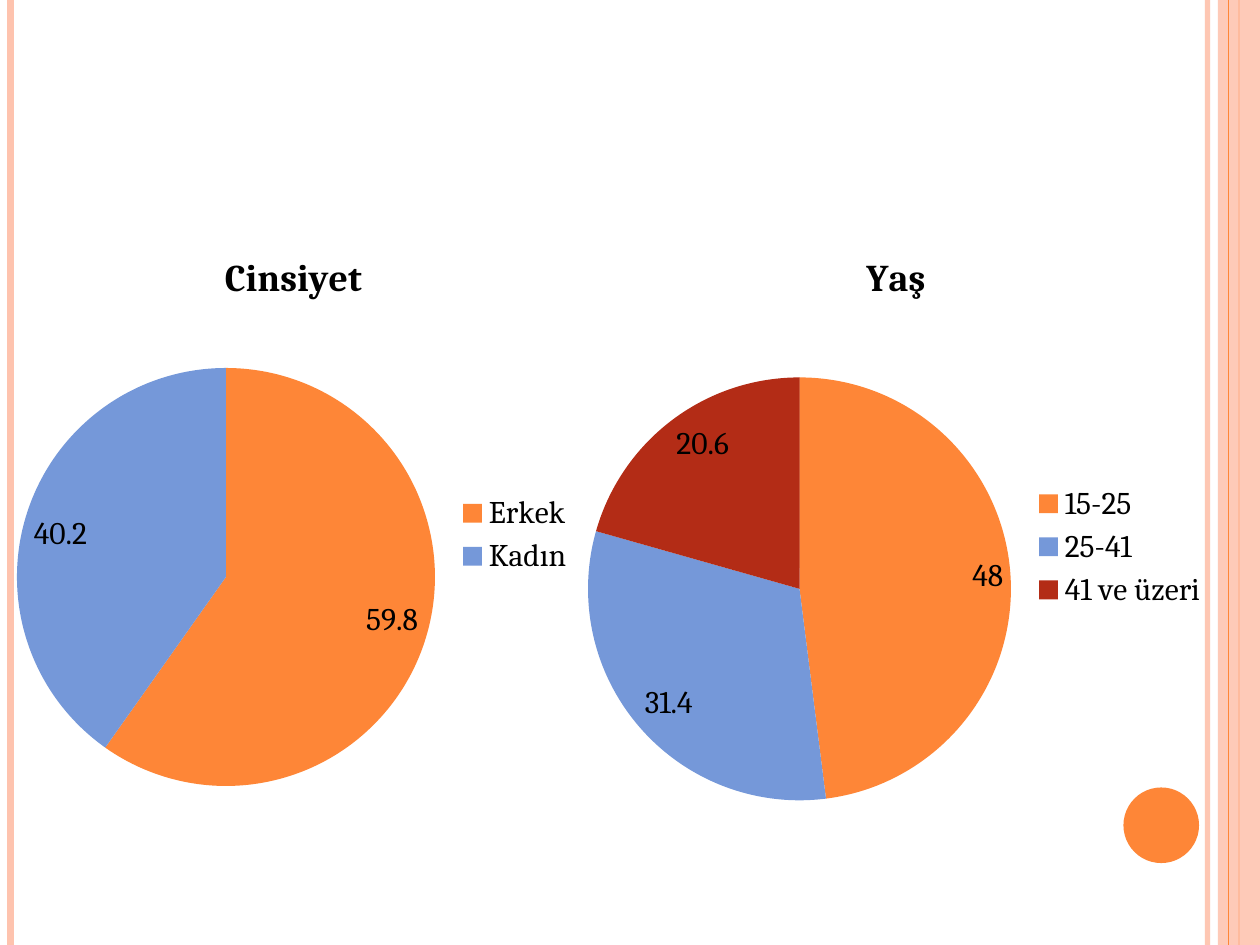
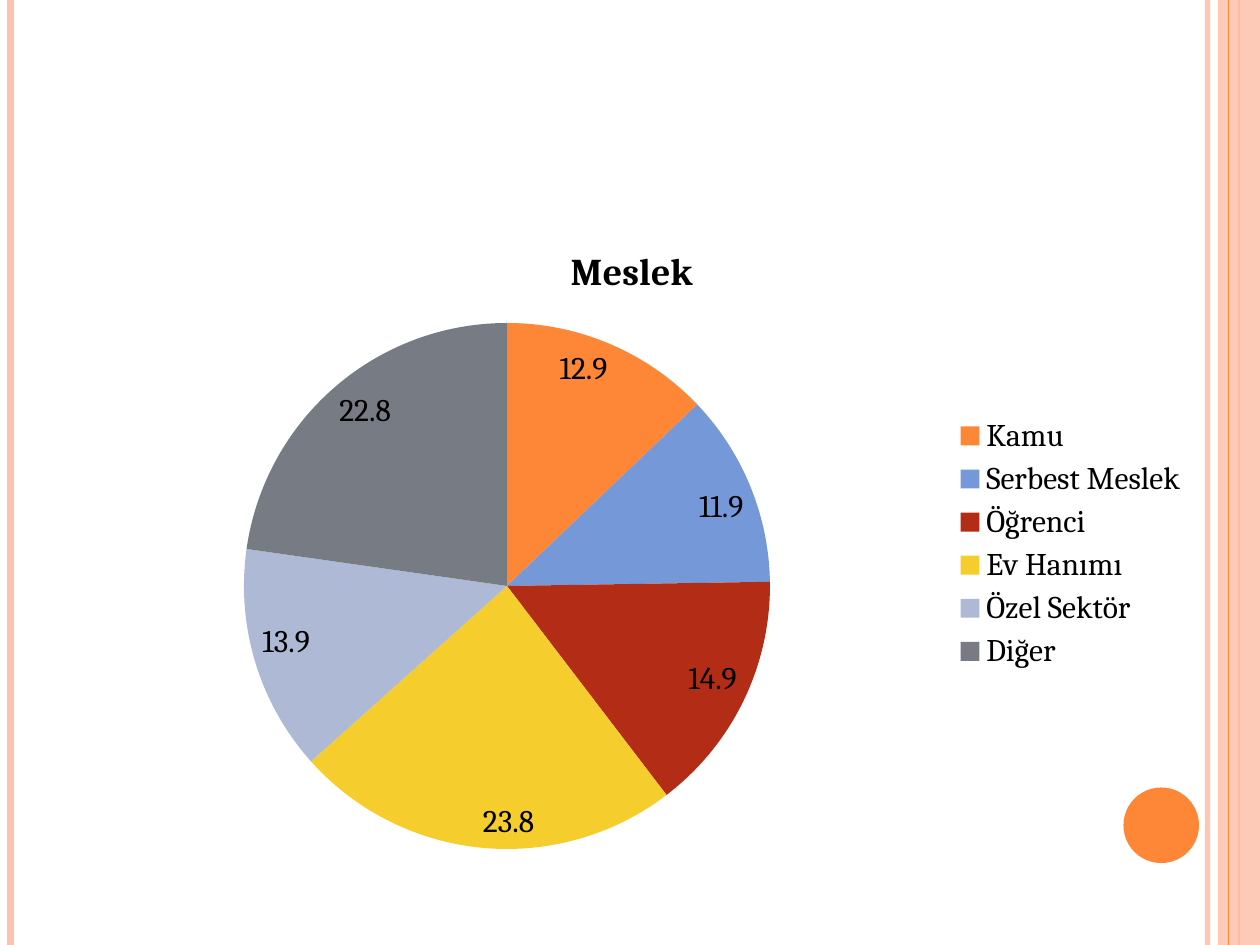
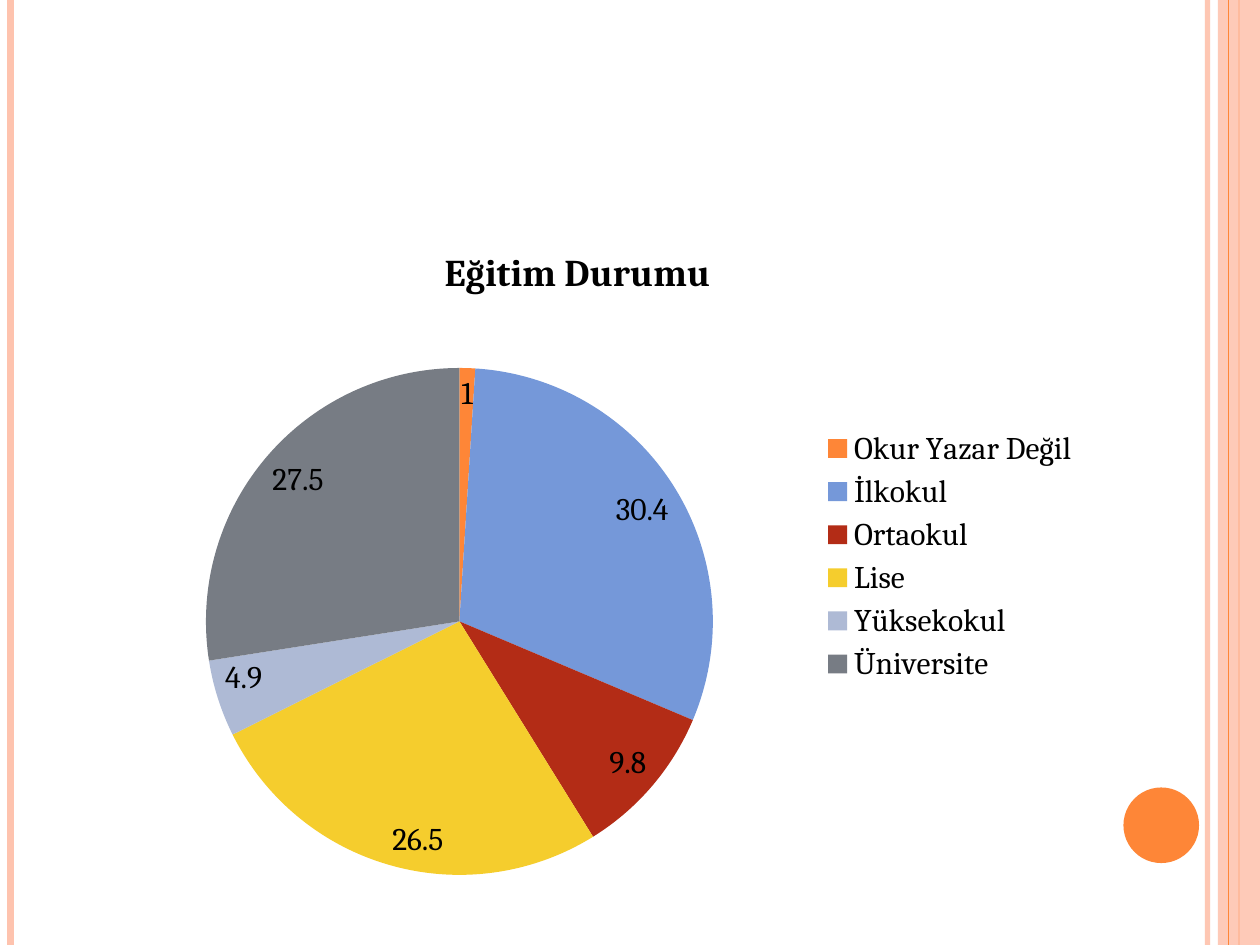
from lxml import etree
from pptx import Presentation
from pptx.chart.data import CategoryChartData
from pptx.dml.color import RGBColor
from pptx.enum import chart as ch, shapes
from pptx.oxml import ns
from pptx.util import Pt

WIDE, HIGH = 720, 540
FONT = "Cambria"
COLORS = {
    "black": "000000",
    "white": "FFFFFF",
    "peach": "FEC3AE",
    "orange": "FE8637",
    "blue": "7598D9",
    "red": "B32C16",
    "yellow": "F5CD2D",
    "pale": "AEBAD5",
    "gray": "777C84",
}
SLICES = ["orange", "blue", "red", "yellow", "pale", "gray"]


def rgb(name):
    return RGBColor.from_string(COLORS[name])


def style(font, size=18, bold=False, color="black"):
    font.name, font.size, font.bold = FONT, Pt(size), bold
    font.color.rgb = rgb(color)


def write(frame, words, **look):
    """Put one formatted run of text into a text frame."""
    run = frame.paragraphs[0].add_run()
    run.text = words
    style(run.font, **look)


def fade(shape, percent):
    """Make every colour of a shape partly transparent."""
    for color in shape.element.spPr.iter(ns.qn("a:srgbClr")):
        alpha = etree.SubElement(color, ns.qn("a:alpha"))
        alpha.set("val", str(percent * 1000))


def place(chart, box, pie):
    """Fix the pie (left, top, size) inside the chart's box."""
    left, top, wide, high = box
    x, y, size = pie
    area = chart.element.find(".//" + ns.qn("c:plotArea"))
    for old in area.findall(ns.qn("c:layout")):
        area.remove(old)
    layout = etree.Element(ns.qn("c:layout"))
    manual = etree.SubElement(layout, ns.qn("c:manualLayout"))
    values = {
        "layoutTarget": "inner", "xMode": "edge", "yMode": "edge",
        "x": (x - left) / wide, "y": (y - top) / high,
        "w": size / wide, "h": size / high,
    }
    for tag, value in values.items():
        etree.SubElement(manual, ns.qn("c:" + tag)).set("val", str(value))
    area.insert(0, layout)


class Deck:
    def __init__(self):
        self.file = Presentation()
        self.file.slide_width, self.file.slide_height = Pt(WIDE), Pt(HIGH)
        self.slide = None

    def page(self):
        """Start a slide with its side bands and corner dot."""
        self.slide = self.file.slides.add_slide(self.file.slide_layouts[6])
        back = self.slide.background.fill
        back.solid()
        back.fore_color.rgb = rgb("white")
        self.rule(690, "peach", 3, 93)
        self.rule(6, "peach", 4.5)
        self.rule(708, "orange", 1.5)
        self.shape(shapes.MSO_SHAPE.RECTANGLE, (696, 0, 24, HIGH), "peach", 87)
        self.rule(702, "orange", 0.75)
        self.shape(shapes.MSO_SHAPE.OVAL, (642, 450, 43.2, 43.2), "orange")

    def rule(self, x, color, width, alpha=100):
        """Draw a line down the full height of the slide."""
        line = self.slide.shapes.add_connector(
            shapes.MSO_CONNECTOR.STRAIGHT, Pt(x), 0, Pt(x), Pt(HIGH))
        line.line.color.rgb = rgb(color)
        line.line.width = Pt(width)
        etree.SubElement(line.element.spPr, ns.qn("a:effectLst"))
        if alpha < 100:
            fade(line, alpha)

    def shape(self, kind, box, color, alpha=100):
        item = self.slide.shapes.add_shape(kind, *map(Pt, box))
        item.shadow.inherit = False
        item.fill.solid()
        item.fill.fore_color.rgb = rgb(color)
        item.line.fill.background()
        if alpha < 100:
            fade(item, alpha)

    def pie(self, title, box, pie, shares):
        data = CategoryChartData()
        data.categories = list(shares)
        data.add_series(title, list(shares.values()))
        chart = self.slide.shapes.add_chart(
            ch.XL_CHART_TYPE.PIE, *map(Pt, box), data).chart
        style(chart.font)
        chart.has_title = True
        write(chart.chart_title.text_frame, title, size=21.6, bold=True)
        chart.has_legend = True
        chart.legend.position = ch.XL_LEGEND_POSITION.RIGHT
        chart.legend.include_in_layout = False
        style(chart.legend.font)

        plot = chart.plots[0]
        plot.vary_by_categories = True
        series = plot.series[0]
        for i, color in enumerate(SLICES[:len(shares)]):
            fill = series.points[i].format.fill
            fill.solid()
            fill.fore_color.rgb = rgb(color)
        labels = series.data_labels
        labels.show_value = True
        labels.position = ch.XL_LABEL_POSITION.INSIDE_END
        style(labels.font)
        place(chart, box, pie)


def main():
    deck = Deck()

    deck.page()
    deck.pie("Cinsiyet", (0, 129.6, 335.5, 352), (9.7, 210.3, 238.9),
             {"Erkek": 59.8, "Kadın": 40.2})
    deck.pie("Yaş", (326.2, 129.6, 371.5, 365.8), (336, 215.7, 241.7),
             {"15-25": 48, "25-41": 31.4, "41 ve üzeri": 20.6})

    deck.page()
    deck.pie("Meslek", (36, 126, 650.2, 369.4), (139.4, 184.6, 300.6),
             {"Kamu": 12.9, "Serbest Meslek": 11.9, "Öğrenci": 14.9,
              "Ev Hanımı": 23.8, "Özel Sektör": 13.9, "Diğer": 22.8})

    deck.page()
    deck.pie("Eğitim Durumu", (36, 126, 588.2, 383.8), (117.7, 210.3, 289.7),
             {"Okur Yazar Değil": 1, "İlkokul": 30.4, "Ortaokul": 9.8,
              "Lise": 26.5, "Yüksekokul": 4.9, "Üniversite": 27.5})

    deck.file.save("out.pptx")


if __name__ == "__main__":
    main()
